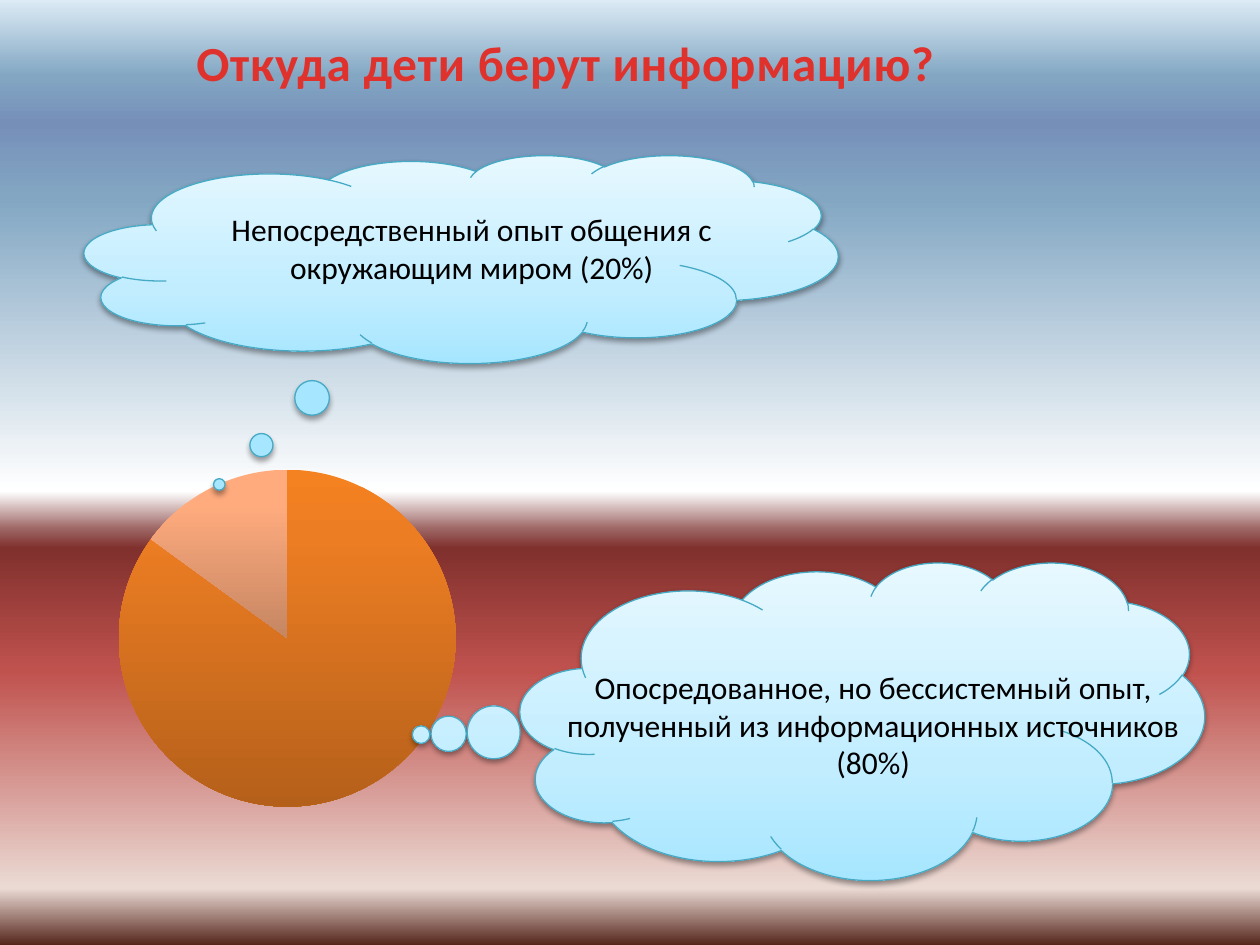
from dataclasses import dataclass

from lxml import etree
from pptx import Presentation
from pptx.chart.data import CategoryChartData
from pptx.dml.color import RGBColor
from pptx.enum.chart import XL_CHART_TYPE
from pptx.enum.shapes import MSO_SHAPE
from pptx.enum.text import MSO_AUTO_SIZE, PP_ALIGN
from pptx.oxml import parse_xml
from pptx.oxml.ns import nsdecls, qn
from pptx.util import Inches, Pt

PIE = XL_CHART_TYPE.PIE
CLOUD = MSO_SHAPE.CLOUD_CALLOUT
GROW = MSO_AUTO_SIZE.SHAPE_TO_FIT_TEXT
CENTER = PP_ALIGN.CENTER


@dataclass(frozen=True)
class Theme:
    """Colours, font and type sizes of the slide."""
    font: str = "Calibri"
    head: int = 28
    body: int = 18
    red: str = "E0322D"
    ink: str = "000000"
    edge: str = "46AAC5"
    sky: tuple = ((0, "DCEBF5"), (8, "83A7C3"), (13, "768FB9"), (21, "83A7C3"),
                  (52, "FFFFFF"), (56, "9C6563"), (58, "80302D"), (71, "C0524E"),
                  (94, "EBDAD4"), (100, "55261C"))
    cloud: tuple = ((0, "E7F8FF"), (65, "C1EDFF"), (100, "A7E6FF"))
    slices: tuple = (((0, "F58220"), (20, "EC7D23"), (100, "B5601A")),
                     ((0, "FFAB7E"), (20, "FFAB7E"), (100, "C58662")))


THEME = Theme()


def box(*sides):
    """Turn left, top, width and height into lengths."""
    return [Inches(side) for side in sides]


def shade(fill, root, stops):
    """Give the newest gradient under root its stops, from top to bottom."""
    fill.gradient()
    fill.gradient_angle = 270
    grad = list(root.iter(qn("a:gradFill")))[-1]
    chain = grad.find(qn("a:gsLst"))
    for old in list(chain):
        chain.remove(old)
    for place, color in stops:
        stop = etree.SubElement(chain, qn("a:gs"), pos=str(place * 1000))
        etree.SubElement(stop, qn("a:srgbClr"), val=color)


def add_pie(slide, place, names, values):
    """Add the pie of information sources."""
    data = CategoryChartData()
    data.categories = names
    data.add_series("Series 1", values)
    chart = slide.shapes.add_chart(PIE, *box(*place), data).chart
    chart.has_legend = False
    chart.has_title = False
    chart.font.name = THEME.font
    chart.font.size = Pt(THEME.body)
    chart.font.color.rgb = RGBColor.from_string(THEME.ink)
    plot = chart.plots[0]
    plot.vary_by_categories = True
    for index, stops in enumerate(THEME.slices):
        part = plot.series[0].points[index].format
        shade(part.fill, chart.element, stops)
        part.line.fill.background()


def add_cloud(slide, place, tail):
    """Add a thought cloud whose bubbles lead to the tail point."""
    cloud = slide.shapes.add_shape(CLOUD, *box(*place))
    for index, value in enumerate(tail):
        cloud.adjustments[index] = value
    shade(cloud.fill, cloud.element, THEME.cloud)
    cloud.line.color.rgb = RGBColor.from_string(THEME.edge)
    cloud.line.width = Pt(0.75)
    cloud.element.spPr.append(parse_xml(
        f'<a:effectLst {nsdecls("a")}><a:outerShdw blurRad="40000" '
        'dist="20000" dir="5400000" rotWithShape="0"><a:srgbClr val="000000">'
        '<a:alpha val="38000"/></a:srgbClr></a:outerShdw></a:effectLst>'))


def add_text(slide, place, lines, size, color, bold=False):
    """Add centred text, one paragraph a line, and return its frame."""
    frame = slide.shapes.add_textbox(*box(*place)).text_frame
    frame.word_wrap = True
    frame.auto_size = GROW
    frame.text = "\n".join(lines)
    for para in frame.paragraphs:
        para.alignment = CENTER
        font = para.font
        font.name = THEME.font
        font.size = Pt(size)
        font.bold = bold
        font.color.rgb = RGBColor.from_string(color)
    return frame


def add_title(slide, place, words):
    """Add the bold red title with slightly wider letter gaps."""
    frame = add_text(slide, place, [words], THEME.head, THEME.red, True)
    run = frame.paragraphs[0].runs[0]
    run.font._element.set("spc", "50")


def main():
    """Build and save the slide."""
    deck = Presentation()
    deck.slide_width, deck.slide_height = Inches(10), Inches(7.5)
    slide = deck.slides.add_slide(deck.slide_layouts[6])
    shade(slide.background.fill, slide.element, THEME.sky)
    add_pie(slide, (0.51, 3.59, 3.54, 2.95), ("1", "2"), (85, 15))
    add_cloud(slide, (4.13, 4.46, 5.43, 2.52), (-0.645, 0.044))
    add_cloud(slide, (0.67, 1.23, 5.98, 1.65), (-0.321, 1.085))
    add_title(slide, (1.22, 0.21, 6.54, 0.57), "Откуда дети берут информацию?")
    notes = (
        ((1.46, 1.62, 4.57, 0.71),
         ["Непосредственный опыт общения с окружающим миром (20%)"]),
        ((4.29, 5.25, 5.28, 1.01),
         ["Опосредованное, но бессистемный опыт, "
          "полученный из информационных источников", "(80%)"]),
    )
    for place, lines in notes:
        add_text(slide, place, lines, THEME.body, THEME.ink)
    deck.save("out.pptx")


if __name__ == "__main__":
    main()
